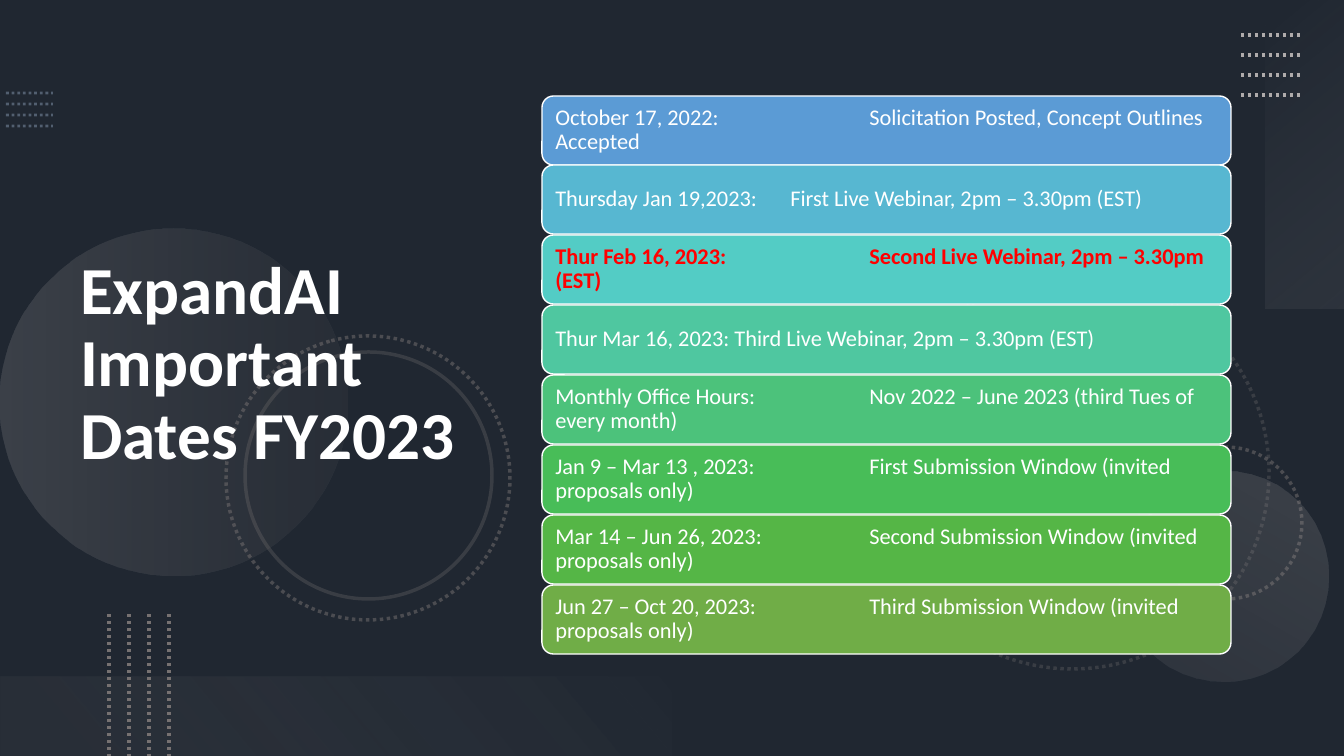
import pptx
import pptx.util
import pptx.dml.color
import pptx.enum.dml
import pptx.enum.shapes
import pptx.enum.text
import lxml.etree
from pptx.oxml.ns import qn

KIND = pptx.enum.shapes.MSO_SHAPE
DASH = pptx.enum.dml.MSO_LINE
SCALE = 12192000 / 1344  # EMU in one px


def px(n):
    return pptx.util.Emu(round(n * SCALE))


def tint(code):
    return pptx.dml.color.RGBColor.from_string(code)


def fade(node, *alphas):
    """Set the opacity, in percent, of each colour below node."""
    for clr, alpha in zip(node.iter(qn("a:srgbClr")), alphas):
        if alpha < 100:
            lxml.etree.SubElement(clr, qn("a:alpha"), val=str(alpha * 1000))


def write(frame, text, size=16, color="FFFFFF", bold=False, pad=10, tabs=()):
    """Fill a text frame with one formatted, left-aligned paragraph."""
    frame.word_wrap = True
    frame.vertical_anchor = pptx.enum.text.MSO_ANCHOR.MIDDLE
    frame.margin_left = frame.margin_right = px(pad)
    frame.margin_top = frame.margin_bottom = px(5)
    frame.text = text
    para = frame.paragraphs[0]
    para.alignment = pptx.enum.text.PP_ALIGN.LEFT
    para.line_spacing = 0.9
    if tabs:
        stops = lxml.etree.SubElement(para._p.get_or_add_pPr(), qn("a:tabLst"))
        for tab in tabs:
            lxml.etree.SubElement(stops, qn("a:tab"), pos=str(px(tab)), algn="l")
    font = para.runs[0].font
    font.name, font.size, font.bold = "Calibri", pptx.util.Pt(size), bold
    font.color.rgb = tint(color)


class Deck:
    def __init__(self, back):
        self.prs = pptx.Presentation()
        self.prs.slide_width, self.prs.slide_height = px(1344), px(756)
        self.slide = self.prs.slides.add_slide(self.prs.slide_layouts[5])
        self.items = self.slide.shapes
        fill = self.slide.background.fill
        fill.solid()
        fill.fore_color.rgb = tint(back)

    def stroke(self, line, color, width, dotted=False):
        line.color.rgb = tint(color)
        line.width = pptx.util.Pt(width)
        if dotted:
            line.dash_style = DASH.ROUND_DOT

    def shape(self, kind, box, turn=0):
        item = self.items.add_shape(kind, *map(px, box))
        item.shadow.inherit = False
        item.rotation = turn
        item.line.fill.background()
        return item

    def solid(self, kind, box, color, alpha=100):
        item = self.shape(kind, box)
        item.fill.solid()
        item.fill.fore_color.rgb = tint(color)
        fade(item._element.spPr, alpha)
        return item

    def blend(self, kind, box, turn, angle, *stops):
        item = self.shape(kind, box, turn)
        item.fill.gradient()
        item.fill.gradient_angle = 360 - angle
        for stop, (pos, color, _) in zip(item.fill.gradient_stops, stops):
            stop.position = pos
            stop.color.rgb = tint(color)
        fade(item._element.spPr, *(alpha for _, _, alpha in stops))

    def ring(self, left, top, size, turn, alpha, dotted=True):
        item = self.shape(KIND.OVAL, (left, top, size, size), turn)
        item.fill.background()
        self.stroke(item.line, "767171", 2.5, dotted)
        fade(item._element.spPr, alpha)

    def dots(self, start, end, step, color, width=2.5, alpha=100):
        """Draw four parallel dotted lines, each moved on by step."""
        for i in range(4):
            dx, dy = step[0] * i, step[1] * i
            line = self.items.add_connector(
                pptx.enum.shapes.MSO_CONNECTOR.STRAIGHT,
                px(start[0] + dx), px(start[1] + dy),
                px(end[0] + dx), px(end[1] + dy))
            self.stroke(line.line, color, width, True)
            fade(line._element.spPr, alpha)
            lxml.etree.SubElement(line._element.spPr, qn("a:effectLst"))

    def title(self, text, box):
        item = self.items.title
        item.left, item.top, item.width, item.height = map(px, box)
        self.items._spTree.append(item._element)  # in front of the backdrop
        write(item.text_frame, text, size=48, bold=True)

    def bar(self, box, fill, text, **style):
        item = self.solid(KIND.ROUNDED_RECTANGLE, box, fill)
        self.stroke(item.line, "FFFFFF", 1)
        write(item.text_frame, text, tabs=(235, 314), **style)


DATES = [
    ("5B9BD5", "October 17, 2022: \t\tSolicitation Posted, Concept Outlines Accepted"),
    ("57B7D1", "Thursday Jan 19,2023: \tFirst Live Webinar, 2pm – 3.30pm (EST)"),
    ("53CCC5", "Thur Feb 16, 2023:\t\tSecond Live Webinar, 2pm – 3.30pm (EST)"),
    ("4FC7A0", "Thur Mar 16, 2023: Third Live Webinar, 2pm – 3.30pm (EST)"),
    ("4CC27B", "Monthly Office Hours: \t\tNov 2022 – June 2023 (third Tues of every month)"),
    ("48BD58", "Jan 9 – Mar 13 , 2023:\t\tFirst Submission Window (invited proposals only)"),
    ("55B646", "Mar 14 – Jun 26, 2023: \t\tSecond Submission Window (invited proposals only)"),
    ("70AD47", "Jun 27 – Oct 20, 2023: \t\tThird Submission Window (invited proposals only)"),
]
NEXT = 2  # the webinar shown in red


def main():
    deck = Deck("44546A")

    # Dark backdrop
    deck.solid(KIND.RECTANGLE, (0, 0, 1344, 756), "000000", 53)
    deck.dots((6, 93), (53, 93), (0, 11), "8497B0", 2, 50)

    # Rings and discs
    deck.ring(876, 276, 393, 75, 30)
    deck.ring(1150, 447, 152, 270, 50)
    deck.blend(KIND.OVAL, (0, 229, 347, 347), 270, 90,
               (0, "AFABAB", 20), (1, "767171", 10))
    deck.blend(KIND.OVAL, (1119, 471, 210, 210), 210, 90,
               (0, "AFABAB", 10), (1, "AFABAB", 20))
    deck.ring(226, 336, 284, 75, 50)
    deck.ring(245, 352, 247, 75, 30, dotted=False)

    # Edge panels and dotted lines
    deck.blend(KIND.RECTANGLE, (1151, 115, 308, 79), 270, 140,
               (0, "F5F5F5", 0), (1, "AFABAB", 10))
    deck.dots((1241, 35), (1301, 35), (0, 20), "AFABAB")
    deck.blend(KIND.RECTANGLE, (0, 677, 672, 79), 180, 140,
               (0.1, "767171", 10), (1, "F1F0F0", 0))
    deck.dots((109, 614), (109, 756), (20, 0), "767171")

    # Title and dates
    deck.title("ExpandAI Important Dates FY2023", (70, 54, 463, 622))
    for i, (fill, text) in enumerate(DATES):
        style = {"color": "FF0000", "bold": True} if i == NEXT else {}
        deck.bar((542, 96 + 489 * i // 7, 689, 69), fill, text, **style)

    deck.prs.save("out.pptx")


if __name__ == "__main__":
    main()
